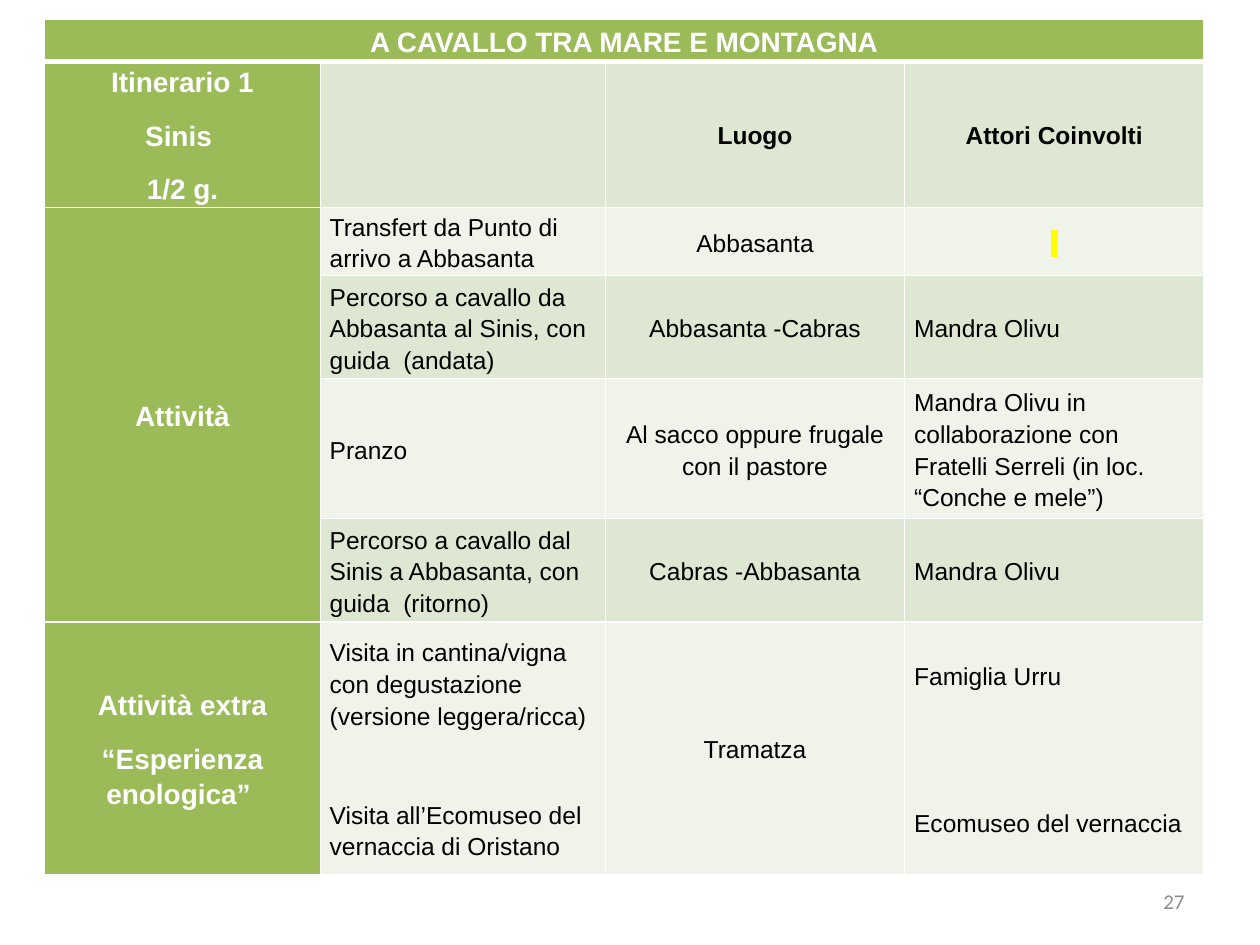
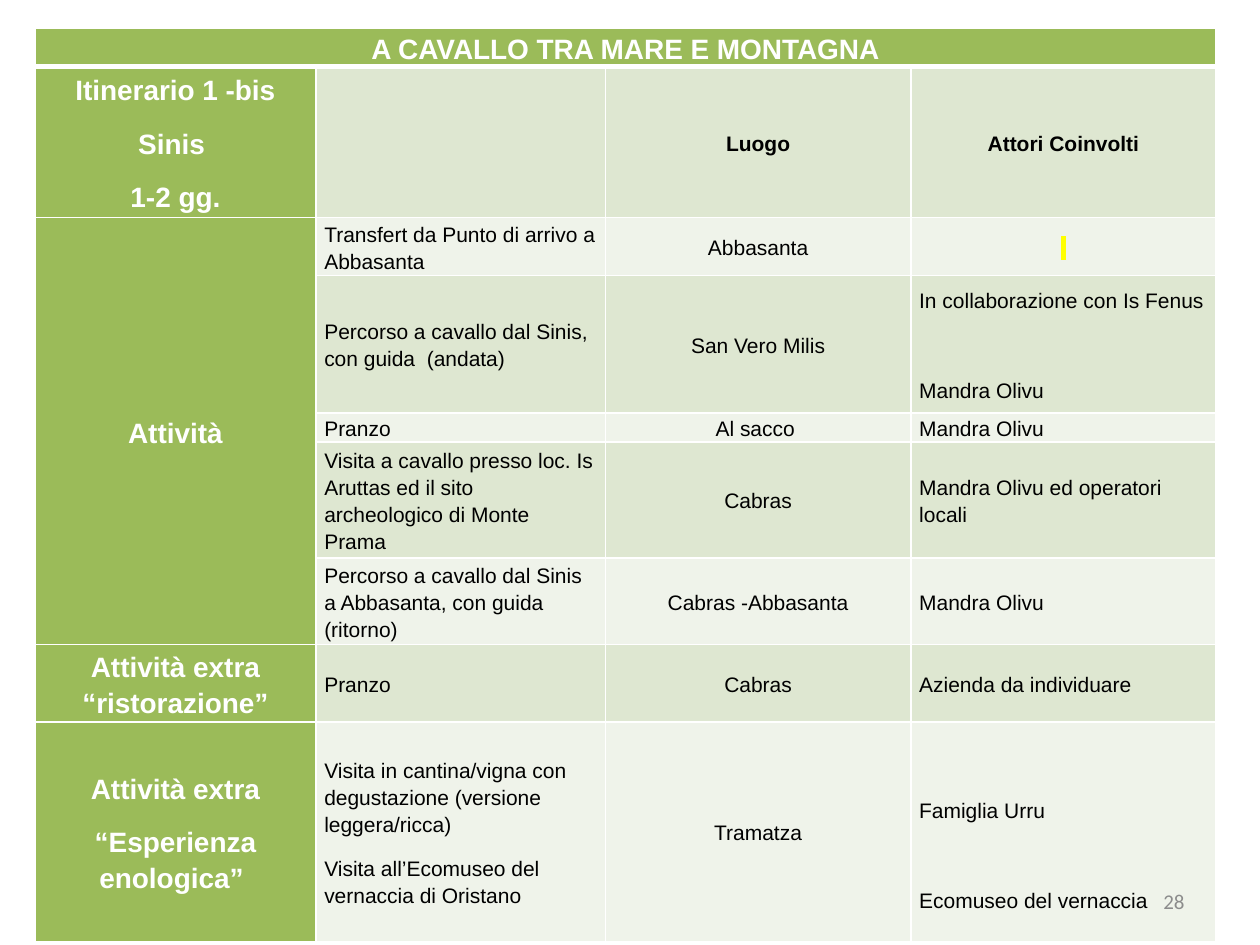
"""Build two riding-itinerary slides, each with a banded programme table and a page number."""
from dataclasses import dataclass

from lxml.etree import SubElement
from pptx import Presentation
from pptx.dml.color import RGBColor
from pptx.enum.text import MSO_ANCHOR as Anchor, PP_ALIGN as Align
from pptx.oxml.ns import qn
from pptx.util import Pt


@dataclass(frozen=True)
class Theme:
    green: str = "9BBB59"
    dark_band: str = "DEE7D1"
    light_band: str = "EFF3EA"
    white: str = "FFFFFF"
    black: str = "000000"
    gray: str = "8C8C8C"
    mark: str = "FFFF00"
    font: str = "Arial"
    number_font: str = "Calibri"
    heading_size: int = 16
    number_size: int = 12


theme = Theme()
MARK = chr(160)
TITLE = "A CAVALLO TRA MARE E MONTAGNA"
TRANSFER = "Transfert da Punto di arrivo a Abbasanta"
RETURN = "Percorso a cavallo dal Sinis a Abbasanta, con guida  (ritorno)"
WINE = "Attività extra\n“Esperienza enologica” "
TASTING = ("Visita in cantina/vigna con degustazione (versione leggera/ricca)\n"
           "Visita all’Ecomuseo del vernaccia di Oristano")
HOSTS = "Famiglia Urru\nEcomuseo del vernaccia"

programmes = [
    dict(
        number=27, left=25.5, top=11, size=14, inset=5.4,
        widths=[157.5, 163, 171, 171],
        heights=[24, 83.5, 39, 59, 80, 59, 144.5],
        gaps={(6, 1): 38.5, (6, 3): 66}, drops={},
        rows=[
            [TITLE, "", "", ""],
            ["Itinerario 1\nSinis \n1/2 g.", "", "Luogo", "Attori Coinvolti"],
            ["Attività", TRANSFER, "Abbasanta", MARK],
            ["", "Percorso a cavallo da Abbasanta al Sinis, con guida  (andata)",
             "Abbasanta -Cabras", "Mandra Olivu"],
            ["", "Pranzo", "Al sacco oppure frugale con il pastore",
             "Mandra Olivu in collaborazione con Fratelli Serreli (in loc. “Conche e mele”)"],
            ["", RETURN, "Cabras -Abbasanta", "Mandra Olivu"],
            [WINE, TASTING, "Tramatza", HOSTS],
        ],
    ),
    dict(
        number=28, left=20, top=16, size=12, inset=4.8,
        widths=[160.5, 165.5, 174.5, 174.5],
        heights=[21, 84, 32.5, 78.5, 16, 65.5, 49, 42.5, 125.5],
        gaps={(3, 3): 36, (8, 3): 36}, drops={(8, 3): 26},
        rows=[
            [TITLE, "", "", ""],
            ["Itinerario 1 -bis\nSinis \n1-2 gg.", "", "Luogo", "Attori Coinvolti"],
            ["Attività", TRANSFER, "Abbasanta", MARK],
            ["", "Percorso a cavallo dal Sinis, con guida  (andata)",
             "San Vero Milis", "In collaborazione con Is Fenus\nMandra Olivu"],
            ["", "Pranzo", "Al sacco ", "Mandra Olivu"],
            ["", "Visita a cavallo presso loc. Is Aruttas ed il sito archeologico di Monte Prama",
             "Cabras", "Mandra Olivu ed operatori locali"],
            ["", RETURN, "Cabras -Abbasanta", "Mandra Olivu"],
            ["Attività extra “ristorazione”", "Pranzo", "Cabras", "Azienda da individuare"],
            [WINE, TASTING, "Tramatza", HOSTS],
        ],
    ),
]


def write(frame, text, size, color, font=theme.font, bold=False, align=Align.LEFT,
          line=1.15, gap=10):
    """Fill a text frame, one paragraph per line of text, and return the last run."""
    for index, content in enumerate(text.split("\n")):
        para = frame.add_paragraph() if index else frame.paragraphs[0]
        para.alignment = align
        para.line_spacing = line
        para.space_after = Pt(gap)
        span = para.add_run()
        span.text = content
        span.font.name = font
        span.font.size = Pt(size)
        span.font.bold = bold
        span.font.color.rgb = RGBColor.from_string(color)
    return span


def add_borders(cell, row):
    """Draw white cell borders, heavier under the title row."""
    properties = cell._tc.get_or_add_tcPr()
    for side in "LRTB":
        heavy = (row, side) in [(0, "B"), (1, "T")]
        border = SubElement(properties, qn(f"a:ln{side}"), w=str(Pt(3 if heavy else 1)))
        fill = SubElement(border, qn("a:solidFill"))
        SubElement(fill, qn("a:srgbClr"), val=theme.white)


deck = Presentation()
deck.slide_width, deck.slide_height = Pt(720), Pt(540)
deck.element.set("firstSlideNum", str(programmes[0]["number"]))

for programme in programmes:
    page = deck.slides.add_slide(deck.slide_layouts[6])
    rows, widths, heights = programme["rows"], programme["widths"], programme["heights"]
    table = page.shapes.add_table(
        len(rows), len(widths), Pt(programme["left"]), Pt(programme["top"]),
        Pt(sum(widths)), Pt(sum(heights))).table
    for column, width in zip(table.columns, widths):
        column.width = Pt(width)
    for table_row, height in zip(table.rows, heights):
        table_row.height = Pt(height)

    for row, texts in enumerate(rows):
        for col, text in enumerate(texts):
            cell = table.cell(row, col)
            heading = row == 0 or col == 0
            band = theme.dark_band if row % 2 else theme.light_band
            cell.margin_left = cell.margin_right = Pt(programme["inset"])
            cell.margin_top = Pt(programme["drops"].get((row, col), 0))
            cell.margin_bottom = Pt(0)
            cell.vertical_anchor = Anchor.MIDDLE
            add_borders(cell, row)
            cell.fill.solid()
            cell.fill.fore_color.rgb = RGBColor.from_string(theme.green if heading else band)
            if not text:
                continue
            centred = heading or row == 1 or col == 2 or text == MARK
            span = write(
                cell.text_frame, text,
                size=theme.heading_size if heading else programme["size"],
                color=theme.white if heading else theme.black,
                bold=heading or row == 1,
                align=Align.CENTER if centred else Align.LEFT,
                gap=programme["gaps"].get((row, col), 10))
            if text == MARK:
                highlight = SubElement(span._r.rPr, qn("a:highlight"))
                SubElement(highlight, qn("a:srgbClr"), val=theme.mark)
                span._r.rPr.find(qn("a:solidFill")).addnext(highlight)

    table.cell(0, 0).merge(table.cell(0, len(widths) - 1))
    continued = [row for row, texts in enumerate(rows) if not texts[0]]
    table.cell(continued[0] - 1, 0).merge(table.cell(continued[-1], 0))

    box = page.shapes.add_textbox(Pt(516), Pt(500.5), Pt(168), Pt(28.75))
    box.text_frame.word_wrap = True
    box.text_frame.vertical_anchor = Anchor.MIDDLE
    span = write(box.text_frame, str(programme["number"]), theme.number_size, theme.gray,
                 font=theme.number_font, align=Align.RIGHT, line=1.0, gap=0)
    para = box.text_frame.paragraphs[0]._p
    field = SubElement(para, qn("a:fld"), type="slidenum",
                       id="{B6F15528-21DE-4FAA-801E-634DDDAF4B2B}")
    field.extend(list(span._r))
    para.remove(span._r)

deck.save("out.pptx")
